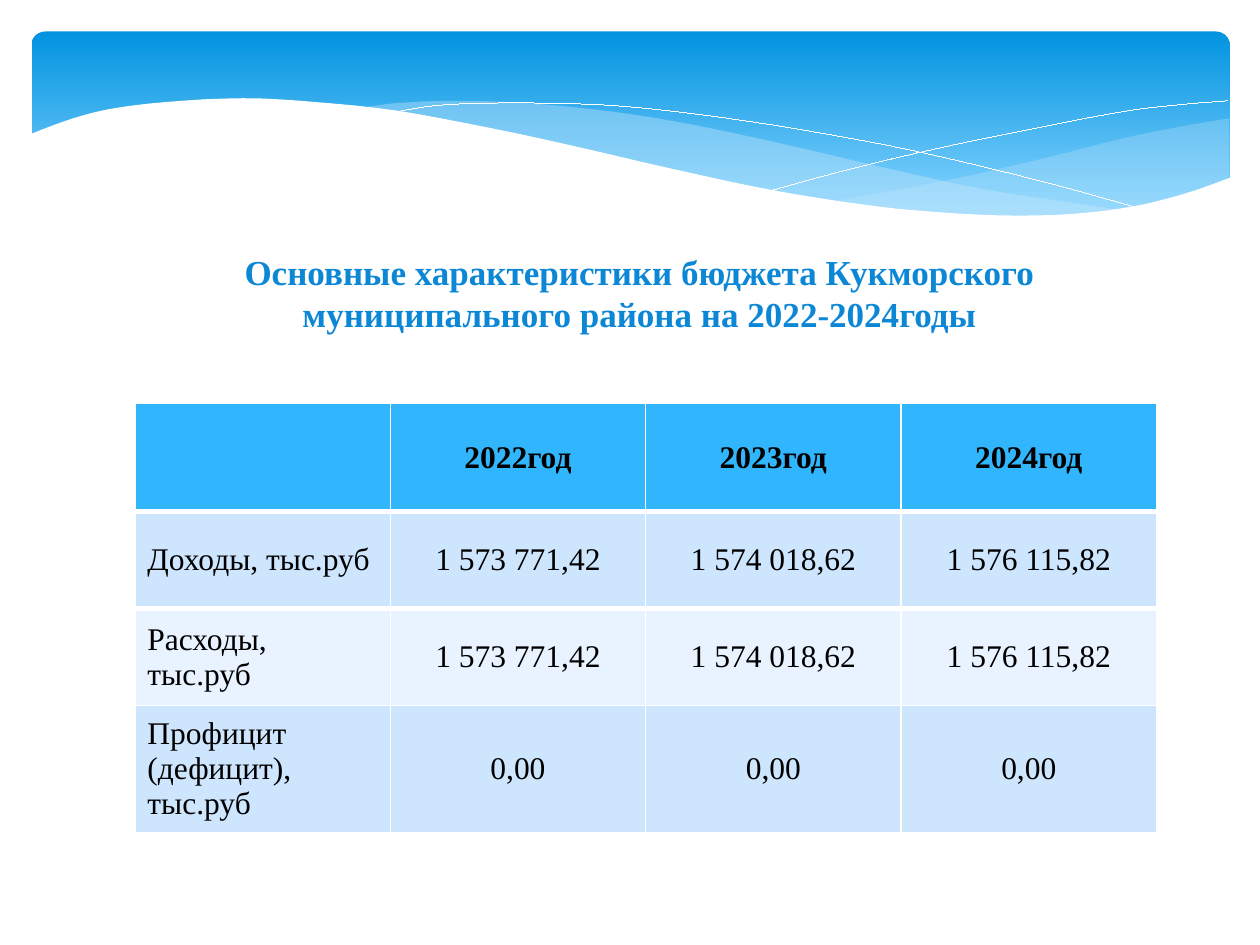
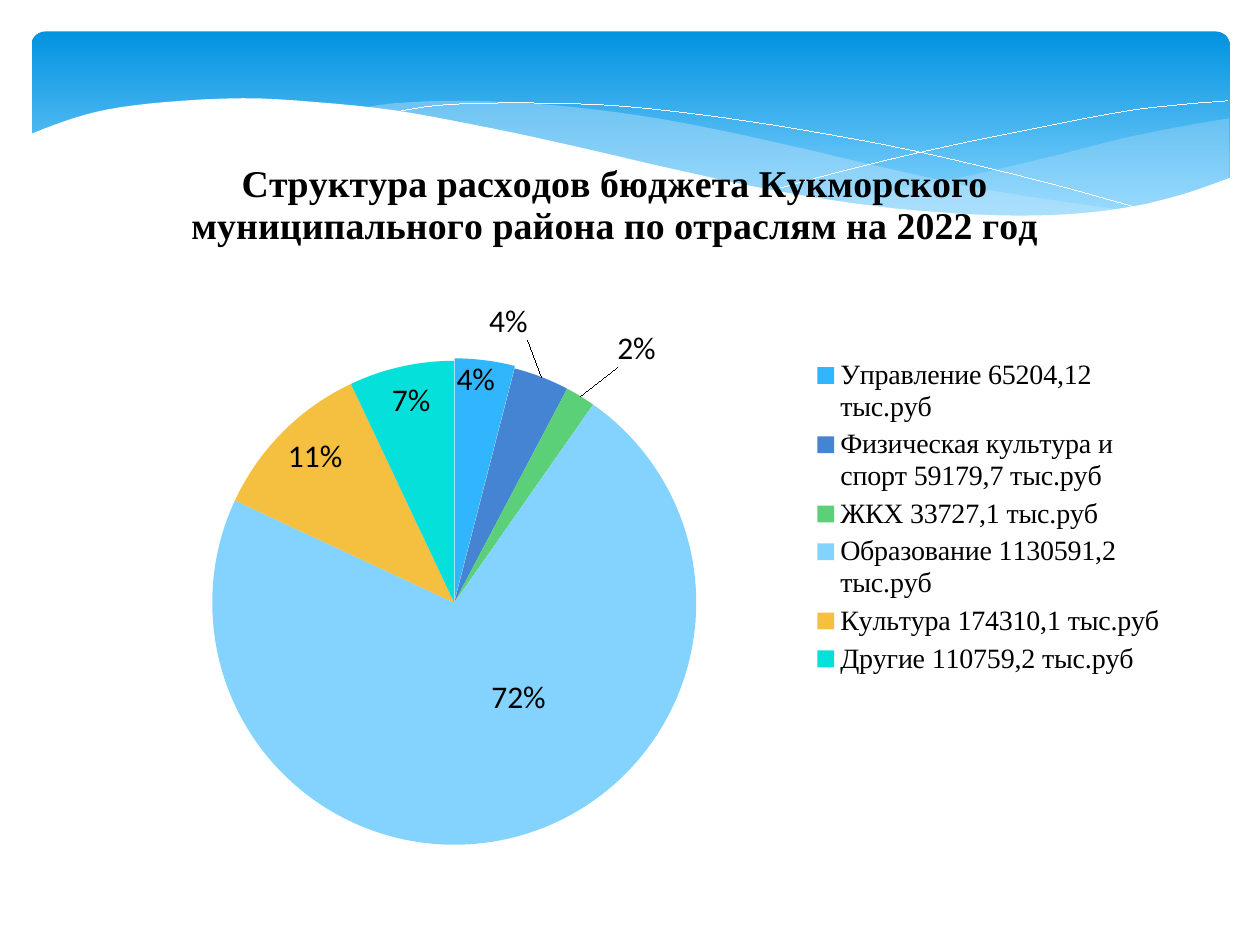
"""Build two budget slides: a table of the main figures and a pie of spending by sector."""
from dataclasses import dataclass

from lxml import etree
from pptx import Presentation
from pptx.chart.data import CategoryChartData
from pptx.dml.color import RGBColor
from pptx.enum.chart import XL_CHART_TYPE, XL_LABEL_POSITION, XL_LEGEND_POSITION
from pptx.enum.shapes import MSO_SHAPE
from pptx.enum.text import MSO_ANCHOR, MSO_AUTO_SIZE, PP_ALIGN
from pptx.oxml import parse_xml
from pptx.oxml.ns import nsdecls, qn
from pptx.util import Inches, Pt

PIE = XL_CHART_TYPE.PIE
LABEL_CENTER = XL_LABEL_POSITION.CENTER
LABEL_INSIDE = XL_LABEL_POSITION.INSIDE_END
LABEL_OUTSIDE = XL_LABEL_POSITION.OUTSIDE_END
LEGEND_RIGHT = XL_LEGEND_POSITION.RIGHT
ROUNDED = MSO_SHAPE.ROUNDED_RECTANGLE
TOP, MIDDLE = MSO_ANCHOR.TOP, MSO_ANCHOR.MIDDLE
LEFT, CENTER = PP_ALIGN.LEFT, PP_ALIGN.CENTER
NO_AUTOFIT = MSO_AUTO_SIZE.NONE
STEPS = 4


@dataclass(frozen=True)
class Theme:
    serif: str = "Times New Roman"
    sans: str = "Calibri"
    black: str = "000000"
    white: str = "FFFFFF"
    title: str = "0B87D6"
    band_top: str = "0293E0"
    band_bottom: str = "83D3FE"
    wave: str = "C6E7FC"
    header: str = "31B6FD"
    stripes: tuple = ("CEE5FE", "E8F3FF")
    slices: tuple = ("31B6FD", "4584D3", "5BD078", "83D3FE", "F5C040", "05E0DB")
    title_size: float = 20
    chart_title_size: float = 21.6
    body_size: float = 18
    legend_size: float = 16
    hairline: float = 0.01
    header_border: float = 3


theme = Theme()


def write_text(text_frame, text, size=theme.body_size, color=theme.black, bold=False, align=LEFT):
    text_frame.text = text
    paragraph = text_frame.paragraphs[0]
    paragraph.alignment = align
    font = paragraph.runs[0].font if paragraph.runs else paragraph.font
    font.name, font.size, font.bold = theme.serif, Pt(size), bold
    font.color.rgb = RGBColor.from_string(color)


def add_wave(shapes, curves, fill=None, opacity=100, corners=()):
    """Draw smooth curves through their knots, joined and then closed when filled."""
    points = []
    for knots in curves:
        padded = [knots[0], *knots, knots[-1]]
        for before, start, end, after in zip(padded, padded[1:], padded[2:], padded[3:]):
            for step in range(STEPS):
                t = step / STEPS
                points.append([
                    b + ((c - a) * t + (2 * a - 5 * b + 4 * c - d) * t**2
                         + (3 * b - a - 3 * c + d) * t**3) / 2
                    for a, b, c, d in zip(before, start, end, after)])
        points.append(knots[-1])
    points = [(x * 1000, y * 1000) for x, y in [*points, *corners]]
    builder = shapes.build_freeform(*points[0], scale=Inches(0.001))
    builder.add_line_segments(points[1:], close=fill is not None)
    shape = builder.convert_to_shape()
    shape.shadow.inherit = False
    if fill is None:
        shape.fill.background()
        shape.line.color.rgb = RGBColor.from_string(theme.white)
        shape.line.width = Pt(theme.hairline)
    else:
        shape.fill.solid()
        shape.fill.fore_color.rgb = RGBColor.from_string(fill)
        shape.line.fill.background()
        for color in shape.element.spPr.iter(qn("a:srgbClr")):
            etree.SubElement(color, qn("a:alpha"), val=str(opacity * 1000))


presentation = Presentation()
presentation.slide_width, presentation.slide_height = Inches(10), Inches(7.5)
table_slide = presentation.slides.add_slide(presentation.slide_layouts[5])
chart_slide = presentation.slides.add_slide(presentation.slide_layouts[6])

shapes = chart_slide.shapes
band = shapes.add_shape(ROUNDED, Inches(0.25), Inches(0.25), Inches(9.51), Inches(1.56))
band.adjustments[0] = 0.07
band.shadow.inherit = False
band.line.fill.background()
band.fill.gradient()
band.fill.gradient_angle = 270
for stop, color, position in zip(band.fill.gradient_stops, (theme.band_top, theme.band_bottom), (0, 0.9)):
    stop.color.rgb = RGBColor.from_string(color)
    stop.position = position

right_wave = [
    [(9.76, 0.94), (9.35, 1.01), (8.91, 1.1), (8.32, 1.25), (7.53, 1.43), (6.61, 1.6)],
    [(6.61, 1.6), (7.05, 1.65), (7.57, 1.7), (8.03, 1.72), (8.54, 1.7), (9.05, 1.63),
     (9.42, 1.54), (9.76, 1.41)],
]
middle_wave = [
    [(8.93, 1.67), (8.37, 1.59), (7.75, 1.49), (7.06, 1.34), (6.29, 1.16), (5.55, 1),
     (4.89, 0.89), (4.2, 0.82), (3.61, 0.8), (3.13, 0.82), (2.86, 0.86)],
    [(2.86, 0.86), (3.42, 0.94), (4.04, 1.06), (4.49, 1.16), (5.3, 1.35), (6.01, 1.5),
     (6.65, 1.61), (7.22, 1.68), (7.73, 1.72), (8.28, 1.73), (8.93, 1.67)],
]
falling_line = [(3.09, 0.9), (3.44, 0.84), (3.87, 0.82), (4.33, 0.82), (4.89, 0.84),
                (5.56, 0.91), (6.36, 1.03), (7.27, 1.2), (8.31, 1.45), (9.07, 1.66)]
rising_line = [(6.13, 1.51), (6.72, 1.35), (7.48, 1.17), (8.36, 0.99), (8.95, 0.88),
               (9.38, 0.83), (9.75, 0.8)]
white_edge = [(0.23, 1.07), (0.52, 0.96), (0.85, 0.87), (1.32, 0.81), (1.93, 0.78),
              (2.5, 0.81), (3.16, 0.88), (3.91, 1.02), (4.47, 1.14), (5.29, 1.33),
              (6.03, 1.49), (6.68, 1.6), (7.26, 1.67), (7.93, 1.71), (8.5, 1.7),
              (8.99, 1.64), (9.4, 1.54), (9.77, 1.41)]
add_wave(shapes, right_wave, fill=theme.wave, opacity=29)
add_wave(shapes, middle_wave, fill=theme.wave, opacity=40)
add_wave(shapes, [falling_line])
add_wave(shapes, [rising_line])
add_wave(shapes, [white_edge], fill=theme.white, corners=[(9.77, 2.24), (0.23, 2.24)])

master_tree = presentation.slide_master.shapes.element
for index, shape in enumerate(list(shapes)):
    master_tree.insert(2 + index, shape.element)

title = table_slide.shapes.title
title.left, title.top, title.width, title.height = map(Inches, (0.98, 1.94, 8.19, 1.45))
write_text(title.text_frame, "Основные характеристики бюджета Кукморского муниципального района на 2022-2024годы",
           size=theme.title_size, color=theme.title, bold=True, align=CENTER)
title.text_frame.vertical_anchor = TOP
title.text_frame.auto_size = NO_AUTOFIT
title.text_frame.word_wrap = True

rows = [
    ("", "2022год", "2023год", "2024год"),
    ("Доходы, тыс.руб", "1 573 771,42", "1 574 018,62", "1 576 115,82"),
    ("Расходы, тыс.руб", "1 573 771,42", "1 574 018,62", "1 576 115,82"),
    ("Профицит (дефицит), тыс.руб", "0,00", "0,00", "0,00"),
]
row_heights = (0.86, 0.77, 0.77, 1.01)
table = table_slide.shapes.add_table(len(rows), len(rows[0]), Inches(1.07), Inches(3.2),
                                     Inches(8.11), Inches(sum(row_heights))).table
for row_index, (texts, height) in enumerate(zip(rows, row_heights)):
    table.rows[row_index].height = Inches(height)
    is_header = row_index == 0
    fill = theme.header if is_header else theme.stripes[(row_index - 1) % 2]
    for column_index, text in enumerate(texts):
        cell = table.cell(row_index, column_index)
        cell.fill.solid()
        cell.fill.fore_color.rgb = RGBColor.from_string(fill)
        cell.vertical_anchor = MIDDLE
        write_text(cell.text_frame, text, bold=is_header, align=CENTER if column_index else LEFT)
        if row_index < 2:
            side = "lnB" if is_header else "lnT"
            cell.fill._xPr.insert(0, parse_xml(
                f'<a:{side} {nsdecls("a")} w="{Pt(theme.header_border)}"><a:solidFill>'
                f'<a:srgbClr val="{theme.white}"/></a:solidFill></a:{side}>'))

sectors = {
    "Управление 65204,12 тыс.руб": 0.04,
    "Физическая культура и спорт 59179,7 тыс.руб": 0.037,
    "ЖКХ 33727,1 тыс.руб": 0.02,
    "Образование 1130591,2 тыс.руб": 0.72,
    "Культура 174310,1 тыс.руб": 0.11,
    "Другие 110759,2 тыс.руб": 0.07,
}
chart_data = CategoryChartData(number_format="0%")
chart_data.categories = list(sectors)
chart_data.add_series("Series 1", list(sectors.values()))
chart = chart_slide.shapes.add_chart(PIE, Inches(0.59), Inches(1.15), Inches(8.74), Inches(5.91), chart_data).chart
chart.font.name, chart.font.size = theme.sans, Pt(theme.body_size)
chart.font.color.rgb = RGBColor.from_string(theme.black)
chart.has_title = True
write_text(chart.chart_title.text_frame,
           "Структура расходов бюджета Кукморского муниципального района по отраслям на 2022 год",
           size=theme.chart_title_size, bold=True, align=CENTER)
chart.has_legend = True
chart.legend.position = LEGEND_RIGHT
chart.legend.include_in_layout = False
chart.legend.font.name, chart.legend.font.size = theme.serif, Pt(theme.legend_size)

plot = chart.plots[0]
plot.vary_by_categories = True
series = plot.series[0]
labels = series.data_labels
labels.show_value = True
labels.number_format, labels.number_format_is_linked = "0%", False
labels.position = LABEL_INSIDE
for index, color in enumerate(theme.slices):
    point_fill = series.points[index].format.fill
    point_fill.solid()
    point_fill.fore_color.rgb = RGBColor.from_string(color)
first_slice = chart.element.xpath("//c:dPt[c:idx/@val='0']")[0]
first_slice.insert(1, parse_xml(f'<c:explosion {nsdecls("c")} val="1"/>'))

moved_labels = [
    (0, LABEL_INSIDE, 0.01, -0.01),
    (1, LABEL_OUTSIDE, -0.05, -0.04),
    (2, LABEL_OUTSIDE, 0.03, -0.03),
    (3, LABEL_CENTER, 0.03, -0.03),
    (5, LABEL_INSIDE, -0.01, 0.01),
]
layouts = [
    ("//c:chart/c:title", 1, {"xMode": "edge", "yMode": "edge", "x": 0.1, "y": 0.01}),
    ("//c:plotArea", 0, {"layoutTarget": "inner", "xMode": "edge", "yMode": "edge",
                         "x": 0.07, "y": 0.29, "w": 0.55, "h": 0.65}),
    ("//c:legend", 1, {"xMode": "edge", "yMode": "edge", "x": 0.67, "y": 0.28, "w": 0.32, "h": 0.44}),
]
for index, position, x, y in moved_labels:
    series.points[index].data_label.position = position
    layouts.append((f"//c:dLbl[c:idx/@val='{index}']", 1, {"x": x, "y": y}))
for query, place, settings in layouts:
    parent = chart.element.xpath(query)[0]
    for old_layout in parent.findall(qn("c:layout")):
        parent.remove(old_layout)
    values = "".join(f'<c:{name} val="{value}"/>' for name, value in settings.items())
    parent.insert(place, parse_xml(
        f'<c:layout {nsdecls("c")}><c:manualLayout>{values}</c:manualLayout></c:layout>'))

presentation.save("out.pptx")
